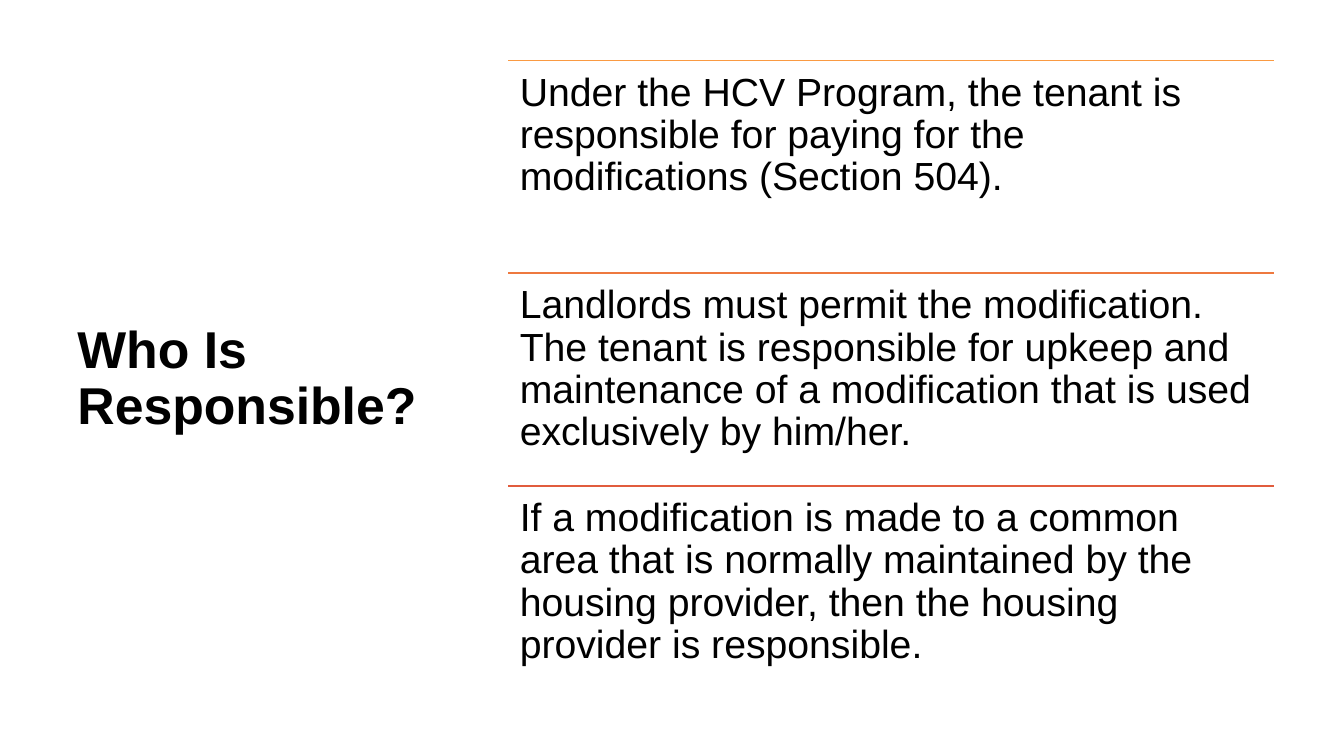
"""Build the slide on who is responsible for modifications."""
import pptx
import pptx.dml.color
import pptx.enum.shapes
import pptx.enum.text
import pptx.oxml.ns
import pptx.util
from lxml import etree

Pt = pptx.util.Pt
TOP = 43.2
RULES_LEFT = 362.9
RULES_WIDTH = 547.2
ROW_HEIGHT = 151.92

RESPONSIBILITIES = [
    ("FA9A42", "Under the HCV Program, the tenant is responsible for paying "
               "for the modifications (Section 504)."),
    ("EE793F", "Landlords must permit the modification. The tenant is "
               "responsible for upkeep and maintenance of a modification "
               "that is used exclusively by him/her."),
    ("E15C3D", "If a modification is made to a common area that is normally "
               "maintained by the housing provider, then the housing "
               "provider is responsible."),
]


def color(hex_code):
    """Return the colour for a hex string."""
    return pptx.dml.color.RGBColor.from_string(hex_code)


def add_rule(slide, left, top, width, hex_code):
    """Draw a thin horizontal rule."""
    rule = slide.shapes.add_connector(
        pptx.enum.shapes.MSO_CONNECTOR.STRAIGHT,
        Pt(left), Pt(top), Pt(left + width), Pt(top))
    rule.line.width = Pt(1)
    rule.line.color.rgb = color(hex_code)
    etree.SubElement(rule.element.spPr, pptx.oxml.ns.qn("a:effectLst"))


def add_text(slide, left, top, width, height, words, size, bold=False,
             anchor=pptx.enum.text.MSO_ANCHOR.TOP, inset=(7.2, 3.6)):
    """Place a wrapped paragraph with horizontal and vertical insets."""
    frame = slide.shapes.add_textbox(
        Pt(left), Pt(top), Pt(width), Pt(height)).text_frame
    frame.word_wrap = True
    frame.vertical_anchor = anchor
    frame.margin_left = frame.margin_right = Pt(inset[0])
    frame.margin_top = frame.margin_bottom = Pt(inset[1])
    paragraph = frame.paragraphs[0]
    paragraph.line_spacing = 0.9
    run = paragraph.add_run()
    run.text = words
    run.font.name = "Arial"
    run.font.size = Pt(size)
    run.font.bold = bold
    run.font.color.rgb = color("000000")


def main():
    """Build and save the slide."""
    deck = pptx.Presentation()
    deck.slide_width = Pt(960)
    deck.slide_height = Pt(540)
    slide = deck.slides.add_slide(deck.slide_layouts[6])
    add_text(slide, 48.24, TOP, 275.04, 3 * ROW_HEIGHT, "Who Is Responsible?",
             37, bold=True, anchor=pptx.enum.text.MSO_ANCHOR.MIDDLE)
    for row, (rule_color, statement) in enumerate(RESPONSIBILITIES):
        row_top = TOP + row * ROW_HEIGHT
        add_rule(slide, RULES_LEFT, row_top, RULES_WIDTH, rule_color)
        add_text(slide, RULES_LEFT, row_top, RULES_WIDTH, ROW_HEIGHT,
                 statement, 28, inset=(8.4, 8.4))
    deck.save("out.pptx")


if __name__ == "__main__":
    main()
